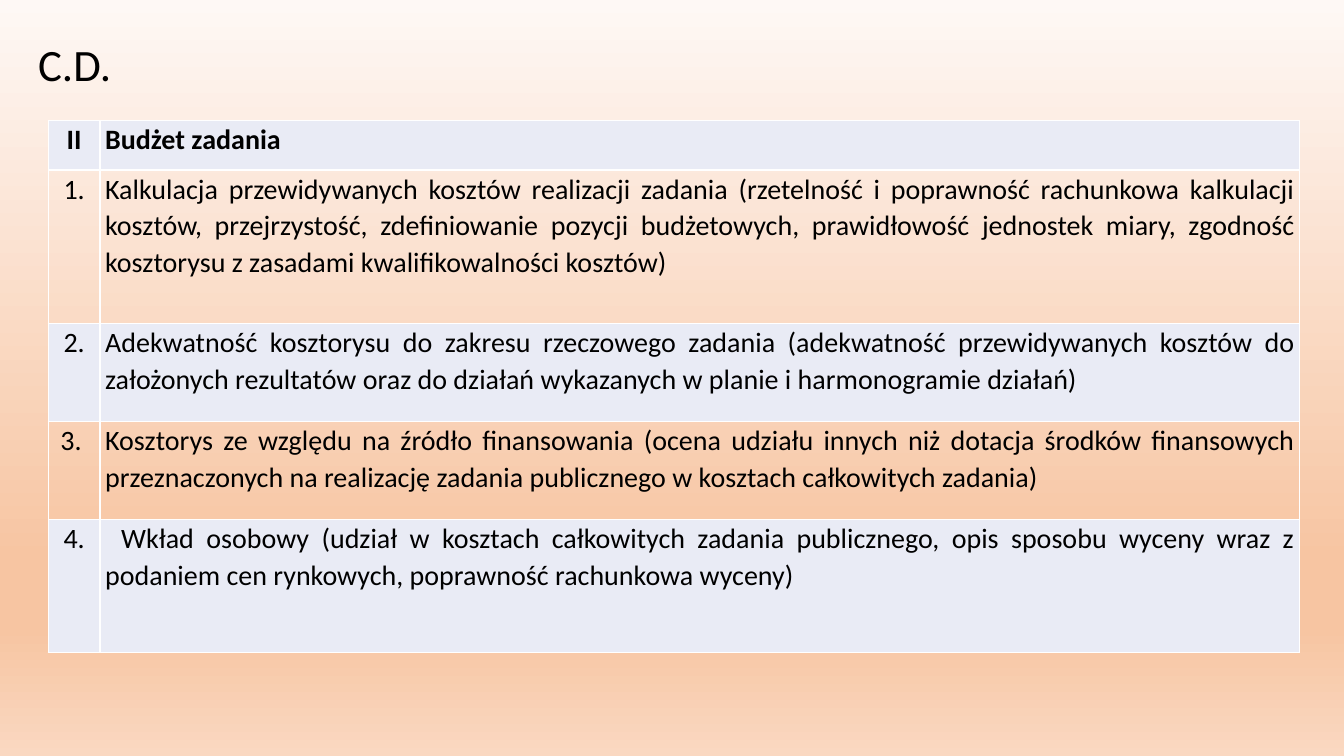
from copy import deepcopy

from lxml import etree
from pptx import Presentation
from pptx.dml.color import RGBColor
from pptx.enum import text
from pptx.oxml.ns import qn
from pptx.util import Pt


def rgb(value):
    return RGBColor.from_string(value)


def format_text(p, size, spacing, bold=False):
    p.line_spacing = spacing
    for r in p.runs:
        r.font.name = "Calibri"
        r.font.size = Pt(size)
        r.font.bold = bold
        r.font.color.rgb = rgb("000000")


prs = Presentation()
prs.slide_width, prs.slide_height = Pt(960), Pt(540)
s = prs.slides.add_slide(prs.slide_layouts[5])

# Background gradient, top to bottom
fill = s.background.fill
fill.gradient()
fill.gradient_angle = 270
stops = s.element.find(".//" + qn("a:gsLst"))
for _ in range(2):
    stops.append(deepcopy(stops[0]))
shades = [(0, "FEF8F5"), (0.74, "F7C5A2"), (0.83, "F7C5A2"), (1, "FAD8C1")]
for stop, (position, color) in zip(fill.gradient_stops, shades):
    stop.position = position
    stop.color.rgb = rgb(color)

# Title
title = s.shapes.title
title.left, title.top, title.width, title.height = Pt(20), Pt(29), Pt(873), Pt(38)
tf = title.text_frame
tf.text = "C.D."
tf.vertical_anchor = text.MSO_ANCHOR.MIDDLE
tf.paragraphs[0].alignment = text.PP_ALIGN.LEFT
format_text(tf.paragraphs[0], 32, 0.9)

# Table: number, criterion, row height, space after the criterion
rows = [
    ("II", "Budżet zadania", 35.5, 8),
    ("1.", "Kalkulacja przewidywanych kosztów realizacji zadania (rzetelność i poprawność "
     "rachunkowa kalkulacji kosztów, przejrzystość, zdefiniowanie pozycji budżetowych, "
     "prawidłowość jednostek miary, zgodność kosztorysu z zasadami kwalifikowalności "
     "kosztów)", 109.5, 0),
    ("2.", "Adekwatność kosztorysu do zakresu rzeczowego zadania (adekwatność "
     "przewidywanych kosztów do założonych rezultatów oraz do działań wykazanych w planie "
     "i harmonogramie działań)", 70, 0),
    ("3. ", "Kosztorys ze względu na źródło finansowania (ocena udziału innych niż dotacja "
     "środków finansowych przeznaczonych na realizację zadania publicznego w kosztach "
     "całkowitych zadania)", 70, 8),
    ("4.", "Wkład osobowy (udział w kosztach całkowitych zadania publicznego, opis sposobu "
     "wyceny wraz z podaniem cen rynkowych, poprawność rachunkowa wyceny)", 95, 0),
]
table = s.shapes.add_table(len(rows), 2, Pt(34.5), Pt(86), Pt(894), Pt(380)).table
table.first_row = table.horz_banding = False
table.columns[0].width, table.columns[1].width = Pt(37), Pt(857)

for i, (number, criterion, height, space) in enumerate(rows):
    table.rows[i].height = Pt(height)
    for j, content in enumerate((number, criterion)):
        cell = table.cell(i, j)
        cell.margin_left = cell.margin_right = Pt(3.6)
        cell.margin_top = cell.margin_bottom = 0

        # White borders, then the fill of every other row
        tcPr = cell._tc.get_or_add_tcPr()
        for side in ("a:lnL", "a:lnR", "a:lnT", "a:lnB"):
            ln = etree.SubElement(tcPr, qn(side), w=str(Pt(1)))
            solid = etree.SubElement(ln, qn("a:solidFill"))
            etree.SubElement(solid, qn("a:srgbClr"), val="FFFFFF")
        if i % 2 == 0:
            cell.fill.solid()
            cell.fill.fore_color.rgb = rgb("E9EBF5")
        else:
            cell.fill.background()

        # Text
        p = cell.text_frame.paragraphs[0]
        p.text = content
        format_text(p, 20, 1.07, bold=i == 0)
        p.space_after = Pt(space if j else 8)
        if j == 0:
            p.alignment = text.PP_ALIGN.CENTER
        else:
            p.alignment = text.PP_ALIGN.JUSTIFY if i else text.PP_ALIGN.LEFT

# First-line indent of the last criterion
p._p.get_or_add_pPr().set("indent", str(Pt(11.5)))

prs.save("out.pptx")
